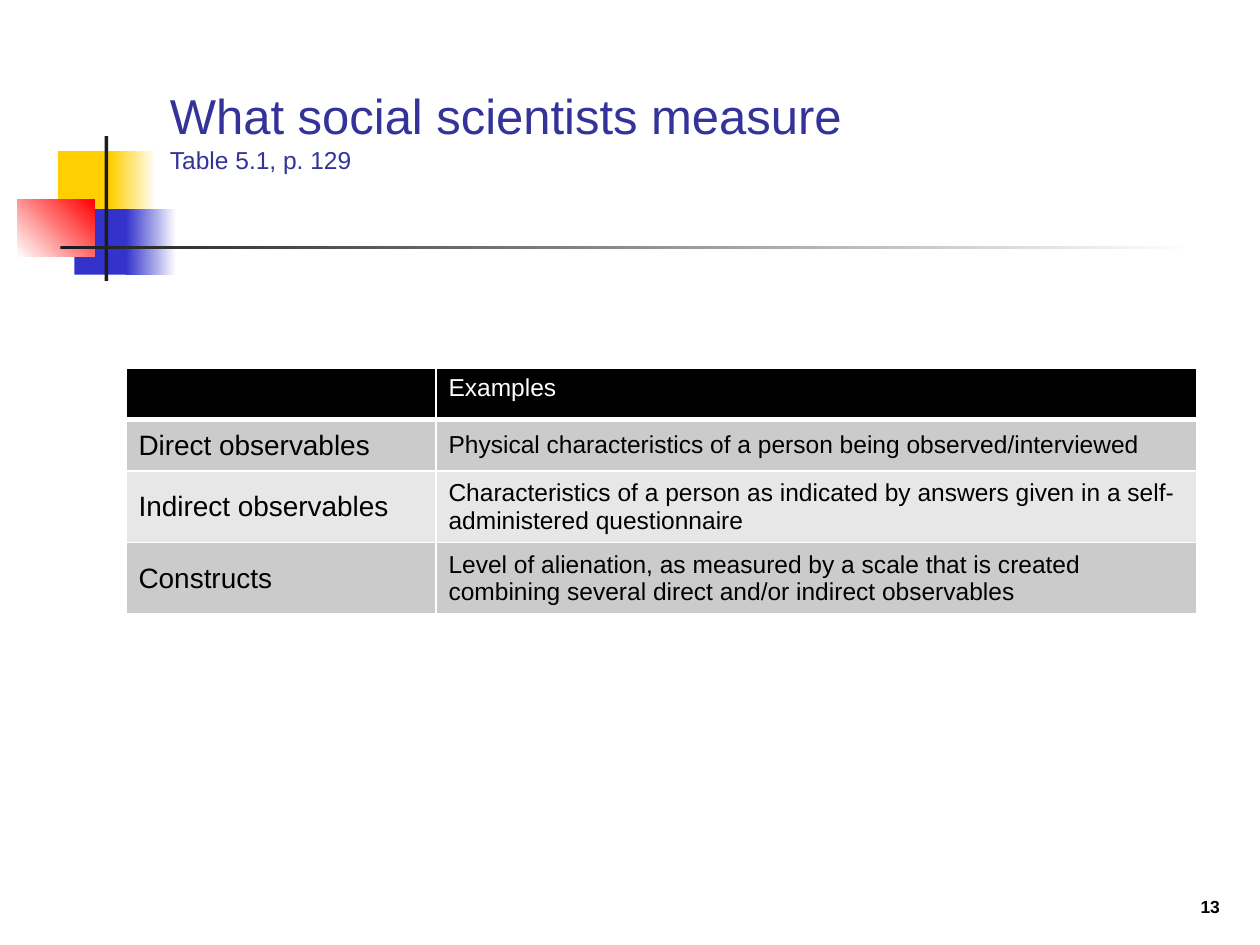
"""Build the slide on what social scientists measure."""
from dataclasses import dataclass

import pptx
import pptx.dml.color
import pptx.enum.shapes
import pptx.enum.text
import pptx.oxml
import pptx.oxml.ns
import pptx.util

Inches = pptx.util.Inches
ANCHOR = pptx.enum.text.MSO_ANCHOR
ALIGN = pptx.enum.text.PP_ALIGN


@dataclass(frozen=True)
class Theme:
    font: str = "Arial"
    white: str = "FFFFFF"
    black: str = "000000"
    ink: str = "1C1C1C"
    yellow: str = "FFCF01"
    blue: str = "3333CC"
    red: str = "FF0000"
    title: str = "333399"
    bands: tuple = ("CBCBCB", "E7E7E7")
    title_size: int = 28
    label_size: int = 16
    body_size: int = 14
    number_size: int = 10


T = Theme()

ROWS = [
    ("", "Examples"),
    ("Direct observables",
     "Physical characteristics of a person being observed/interviewed"),
    ("Indirect observables",
     "Characteristics of a person as indicated by answers given in a "
     "self-administered questionnaire"),
    ("Constructs",
     "Level of alienation, as measured by a scale that is created "
     "combining several direct and/or indirect observables"),
]


def rgb(color):
    return pptx.dml.color.RGBColor.from_string(color)


def add_run(p, text, size=T.body_size, color=T.black, bold=False):
    r = p.add_run()
    r.text = text
    r.font.name = T.font
    r.font.size = pptx.util.Pt(size)
    r.font.bold = bold
    r.font.color.rgb = rgb(color)


def add_textbox(s, box, align=ALIGN.LEFT):
    tf = s.shapes.add_textbox(*map(Inches, box)).text_frame
    tf.word_wrap = True
    tf.vertical_anchor = ANCHOR.BOTTOM
    p = tf.paragraphs[0]
    p.alignment = align
    return p


def add_block(s, box, start, end=None, angle=0):
    sp = s.shapes.add_shape(
        pptx.enum.shapes.MSO_SHAPE.RECTANGLE, *map(Inches, box))
    sp.shadow.inherit = False
    sp.line.fill.background()
    if end is None:
        sp.fill.solid()
        sp.fill.fore_color.rgb = rgb(start)
        return
    sp.fill.gradient()
    sp.fill.gradient_angle = angle
    for stop, color in zip(sp.fill.gradient_stops, (start, end)):
        stop.color.rgb = rgb(color)


def add_ornament(s):
    add_block(s, (0.46, 1.2, 0.48, 0.52), T.yellow)
    add_block(s, (0.88, 1.2, 0.36, 0.52), T.yellow, T.white)
    add_block(s, (0.59, 1.66, 0.46, 0.52), T.blue)
    add_block(s, (1, 1.66, 0.4, 0.52), T.blue, T.white)
    add_block(s, (0.14, 1.58, 0.61, 0.46), T.white, T.red, angle=45)
    add_block(s, (0.83, 1.08, 0.03, 1.15), T.ink)
    add_block(s, (0.48, 1.95, 9, 0.03), T.ink, T.white)


def set_borders(cell, top, bottom):
    tc_pr = cell._tc.get_or_add_tcPr()
    widths = {"lnL": 1, "lnR": 1, "lnT": top, "lnB": bottom}
    for i, (tag, width) in enumerate(widths.items()):
        tc_pr.insert(i, pptx.oxml.parse_xml(
            f'<a:{tag} {pptx.oxml.ns.nsdecls("a")} w="{pptx.util.Pt(width)}">'
            f'<a:solidFill><a:srgbClr val="{T.white}"/></a:solidFill>'
            f'</a:{tag}>'))


def fill_cell(cell, text, row, col):
    header = row == 0
    cell.fill.solid()
    cell.fill.fore_color.rgb = rgb(
        T.black if header else T.bands[(row - 1) % 2])
    cell.vertical_anchor = ANCHOR.TOP if header else ANCHOR.MIDDLE
    set_borders(cell, top=3 if row == 1 else 1, bottom=3 if header else 1)
    if text:
        add_run(cell.text_frame.paragraphs[0], text,
                size=T.body_size if header or col else T.label_size,
                color=T.white if header else T.black)


def add_measure_table(s):
    widths, height = (2.46, 6.04), 0.41
    table = s.shapes.add_table(
        len(ROWS), len(widths), Inches(1), Inches(2.92),
        Inches(sum(widths)), Inches(height * len(ROWS))).table
    table.first_row = table.horz_banding = False
    for column, width in zip(table.columns, widths):
        column.width = Inches(width)
    for i, texts in enumerate(ROWS):
        table.rows[i].height = Inches(height)
        for j, text in enumerate(texts):
            fill_cell(table.cell(i, j), text, i, j)


def main():
    prs = pptx.Presentation()
    prs.slide_width, prs.slide_height = Inches(10), Inches(7.5)
    s = prs.slides.add_slide(prs.slide_layouts[6])
    add_ornament(s)
    p = add_textbox(s, (1.25, 0.5, 8.52, 0.93))
    add_run(p, "What social scientists measure", size=T.title_size,
            color=T.title)
    p.add_line_break()
    add_run(p, "Table 5.1, p. 129", color=T.title)
    add_measure_table(s)
    p = add_textbox(s, (7.7, 6.83, 2.08, 0.5), align=ALIGN.RIGHT)
    add_run(p, "13", size=T.number_size, bold=True)
    prs.save("out.pptx")


if __name__ == "__main__":
    main()
